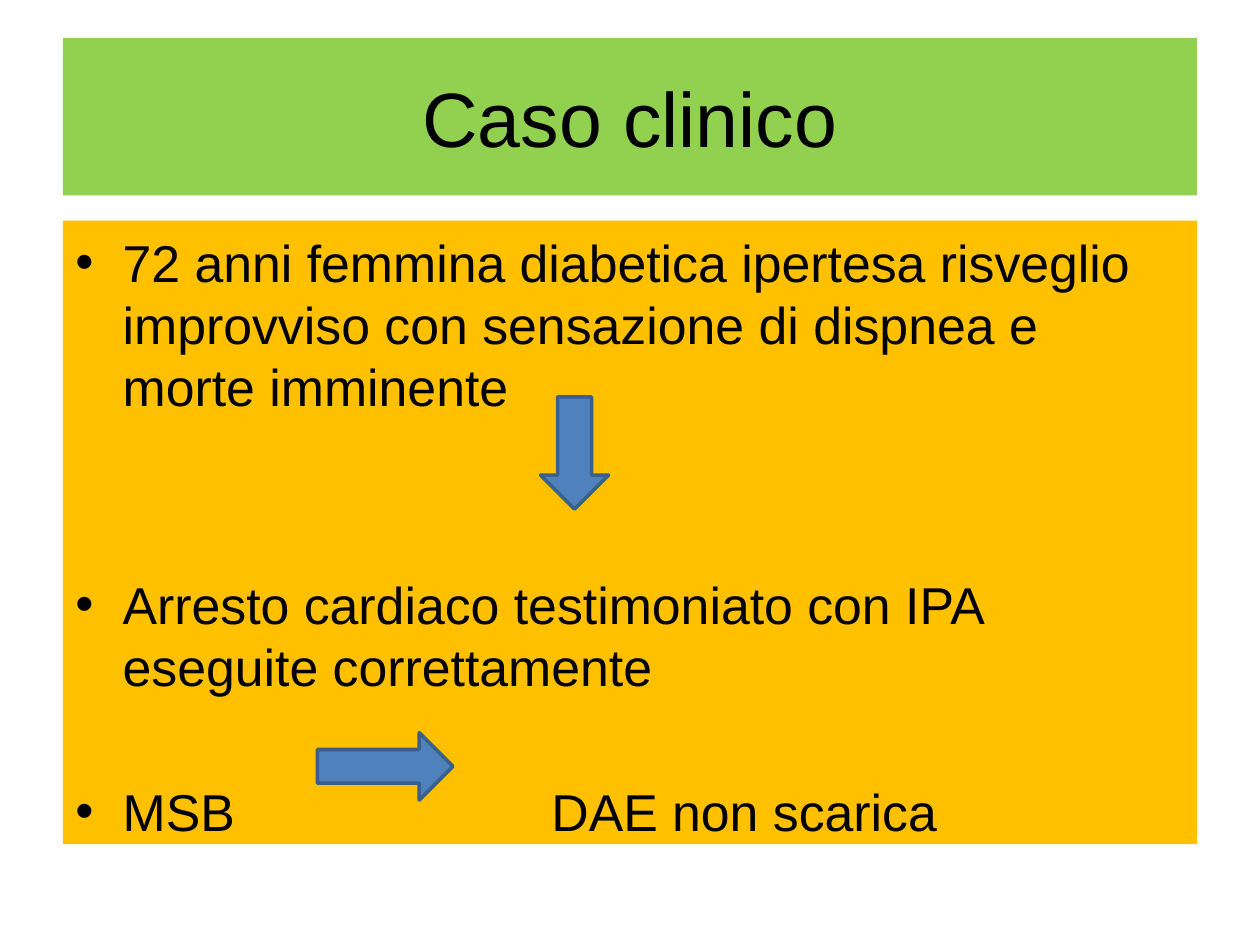
"""Build the clinical case slide with its title, body panel and arrows."""
from dataclasses import dataclass

import pptx
import pptx.dml.color
import pptx.enum.shapes
import pptx.enum.text
import pptx.oxml
import pptx.oxml.ns
import pptx.util

Pt = pptx.util.Pt
SHAPE = pptx.enum.shapes.MSO_SHAPE
ALIGN = pptx.enum.text.PP_ALIGN
ANCHOR = pptx.enum.text.MSO_ANCHOR
HANGING_INDENT = Pt(27)
TAB_POSITION = Pt(272)


@dataclass(frozen=True)
class Block:
    kind: int
    left: float
    top: float
    width: float
    height: float
    fill: str
    line: str | None = None


@dataclass(frozen=True)
class Bullet:
    text: str
    space_before: float


TITLE = Block(SHAPE.RECTANGLE, 36, 21.6, 648, 90, "92D050")
BODY = Block(SHAPE.RECTANGLE, 36, 126, 648, 356.4, "FFC000")
ARROWS = (
    Block(SHAPE.DOWN_ARROW, 308.9, 226.8, 38.9, 64.1, "4F81BD", "3A5F8C"),
    Block(SHAPE.RIGHT_ARROW, 181.4, 418.7, 77.4, 38.5, "4F81BD", "3A5F8C"),
)
BULLETS = (
    Bullet("72 anni femmina diabetica ipertesa risveglio improvviso "
           "con sensazione di dispnea e morte imminente", 0),
    Bullet("Arresto cardiaco testimoniato con IPA eseguite correttamente", 89.2),
    Bullet("MSB\tDAE non scarica", 47.5),
)


def color(value: str) -> pptx.dml.color.RGBColor:
    return pptx.dml.color.RGBColor.from_string(value)


def apply(target, values: dict) -> None:
    for name, value in values.items():
        setattr(target, name, value)


def draw_block(slide, block: Block):
    shape = slide.shapes.add_shape(
        block.kind, Pt(block.left), Pt(block.top), Pt(block.width), Pt(block.height))
    shape.shadow.inherit = False
    shape.fill.solid()
    shape.fill.fore_color.rgb = color(block.fill)
    if block.line:
        shape.line.color.rgb = color(block.line)
        shape.line.width = Pt(2)
    else:
        shape.line.fill.background()
    return shape


def write_paragraph(paragraph, text: str, size: float, values: dict) -> None:
    paragraph.text = text
    apply(paragraph, values)
    apply(paragraph.font, {"name": "Arial", "size": Pt(size)})
    paragraph.font.color.rgb = color("000000")


def add_bullet_format(paragraph) -> None:
    properties = paragraph._p.get_or_add_pPr()
    properties.set("marL", str(HANGING_INDENT))
    properties.set("indent", str(-HANGING_INDENT))
    namespace = pptx.oxml.ns.nsdecls("a")
    for xml in (
        f'<a:buFont {namespace} typeface="Arial"/>',
        f'<a:buChar {namespace} char="•"/>',
        f'<a:tabLst {namespace}><a:tab pos="{TAB_POSITION}" algn="l"/></a:tabLst>',
    ):
        properties.append(pptx.oxml.parse_xml(xml))


def draw_title(slide) -> None:
    frame = draw_block(slide, TITLE).text_frame
    apply(frame, {"word_wrap": True, "vertical_anchor": ANCHOR.MIDDLE})
    write_paragraph(frame.paragraphs[0], "Caso clinico", 44, {"alignment": ALIGN.CENTER})


def draw_body(slide) -> None:
    frame = draw_block(slide, BODY).text_frame
    apply(frame, {"word_wrap": True, "vertical_anchor": ANCHOR.TOP,
                  "margin_top": Pt(5.8)})
    for index, bullet in enumerate(BULLETS):
        paragraph = frame.add_paragraph() if index else frame.paragraphs[0]
        add_bullet_format(paragraph)
        write_paragraph(paragraph, bullet.text, 29.6, {
            "alignment": ALIGN.LEFT,
            "line_spacing": Pt(35.4),
            "space_before": Pt(bullet.space_before),
        })


def main() -> None:
    presentation = pptx.Presentation()
    apply(presentation, {"slide_width": Pt(720), "slide_height": Pt(540)})
    slide = presentation.slides.add_slide(presentation.slide_layouts[6])
    draw_title(slide)
    draw_body(slide)
    for arrow in ARROWS:
        draw_block(slide, arrow)
    presentation.save("out.pptx")


if __name__ == "__main__":
    main()
